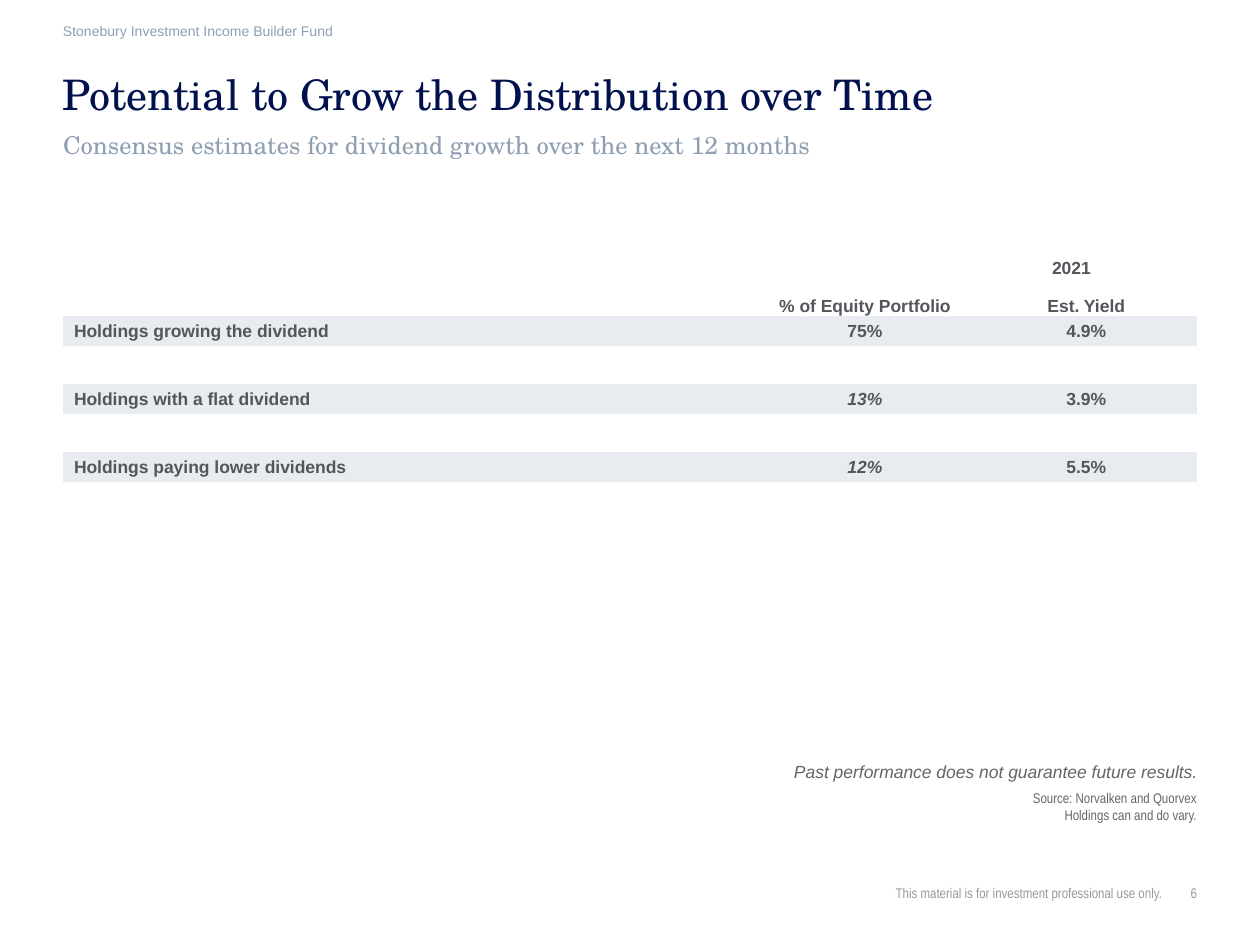
from dataclasses import dataclass

from pptx import Presentation
from pptx.dml.color import RGBColor
from pptx.enum.text import MSO_ANCHOR, PP_ALIGN
from pptx.util import Pt

LEFT, CENTER, RIGHT = PP_ALIGN.LEFT, PP_ALIGN.CENTER, PP_ALIGN.RIGHT
TOP, MIDDLE, BOTTOM = MSO_ANCHOR.TOP, MSO_ANCHOR.MIDDLE, MSO_ANCHOR.BOTTOM
NO_GRID_STYLE = "{2D5ABB26-0587-4C30-8999-92F81FD0307C}"


@dataclass(frozen=True)
class Theme:
    serif: str = "TeX Gyre Schola"
    sans: str = "Arial"
    narrow: str = "Arial Narrow"
    navy: str = "00114D"
    slate: str = "8E9FB2"
    body: str = "53565A"
    note: str = "656565"
    footer: str = "989898"
    band: str = "E8ECF0"
    white: str = "FFFFFF"
    title_size: float = 24
    subtitle_size: float = 14
    body_size: float = 10
    small_size: float = 8


THEME = Theme()

HOLDINGS = [
    ("Holdings growing the dividend", "75%", "4.9%", False),
    ("Holdings with a flat dividend", "13%", "3.9%", True),
    ("Holdings paying lower dividends", "12%", "5.5%", True),
]
COLUMN_WIDTHS = [395, 126.5, 126.5]
HEAD_HEIGHTS = [14.4, 20.3]
BAND_HEIGHT, GAP_HEIGHT = 17.2, 20.9
ROW_HEIGHTS = HEAD_HEIGHTS + [BAND_HEIGHT, GAP_HEIGHT] * 3 + [GAP_HEIGHT] * 3


def write(p, text, *, font=THEME.sans, size=THEME.body_size, color=THEME.body,
          bold=False, italic=False, align=LEFT, spacing=None):
    p.alignment = align
    if spacing:
        p.line_spacing = spacing
    r = p.add_run()
    r.text = text
    r.font.name = font
    r.font.size = Pt(size)
    r.font.bold = bold
    r.font.italic = italic
    r.font.color.rgb = RGBColor.from_string(color)


def add_text(slide, text, left, top, width, height, *, anchor=TOP, **fmt):
    sp = slide.shapes.add_textbox(Pt(left), Pt(top), Pt(width), Pt(height))
    tf = sp.text_frame
    tf.word_wrap = True
    tf.vertical_anchor = anchor
    tf.margin_left = tf.margin_right = tf.margin_top = tf.margin_bottom = 0
    for i, line in enumerate(text.split("\n")):
        p = tf.add_paragraph() if i else tf.paragraphs[0]
        write(p, line, **fmt)


def fill_cell(cell, text, *, anchor=MIDDLE, left=0, right=0, **fmt):
    cell.vertical_anchor = anchor
    cell.margin_left, cell.margin_right = Pt(left), Pt(right)
    write(cell.text_frame.paragraphs[0], text, bold=True, **fmt)


def add_holdings_table(slide, left, top):
    table = slide.shapes.add_table(
        len(ROW_HEIGHTS), len(COLUMN_WIDTHS), Pt(left), Pt(top),
        Pt(sum(COLUMN_WIDTHS)), Pt(sum(ROW_HEIGHTS))).table
    table.first_row = table.horz_banding = False
    table._tbl.tblPr[0].text = NO_GRID_STYLE
    for column, width in zip(table.columns, COLUMN_WIDTHS):
        column.width = Pt(width)
    band_rows = [len(HEAD_HEIGHTS) + 2 * i for i in range(len(HOLDINGS))]
    for i, height in enumerate(ROW_HEIGHTS):
        table.rows[i].height = Pt(height)
        for cell in table.rows[i].cells:
            cell.margin_left = cell.margin_right = 0
            cell.margin_top = cell.margin_bottom = 0
            cell.fill.solid()
            color = THEME.band if i in band_rows else THEME.white
            cell.fill.fore_color.rgb = RGBColor.from_string(color)
    for col in (0, 1):
        table.cell(0, col).merge(table.cell(1, col))
    head = dict(anchor=BOTTOM, align=CENTER)
    fill_cell(table.cell(0, 1), "% of Equity Portfolio", **head)
    fill_cell(table.cell(0, 2), "2021", right=17, **head)
    fill_cell(table.cell(1, 2), "Est. Yield", **head)
    for row, (label, share, est_yield, italic) in zip(band_rows, HOLDINGS):
        fill_cell(table.cell(row, 0), label, left=6.3)
        fill_cell(table.cell(row, 1), share, align=CENTER, italic=italic)
        fill_cell(table.cell(row, 2), est_yield, align=CENTER)


def main():
    prs = Presentation()
    prs.slide_width, prs.slide_height = Pt(720), Pt(540)
    slide = prs.slides.add_slide(prs.slide_layouts[6])

    add_text(slide, "Stonebury Investment Income Builder Fund", 36, 13, 216, 9.4,
             size=THEME.small_size, color=THEME.slate)
    add_text(slide, "Potential to Grow the Distribution over Time", 36, 42.5, 504, 26,
             anchor=BOTTOM, font=THEME.serif, size=THEME.title_size,
             color=THEME.navy, spacing=0.9)
    add_text(slide, "Consensus estimates for dividend growth over the next 12 months",
             36, 74.2, 505, 17, font=THEME.serif, size=THEME.subtitle_size,
             color=THEME.slate)
    add_holdings_table(slide, 36, 144.7)
    add_text(slide, "Past performance does not guarantee future results.",
             115, 435, 569, 12, anchor=BOTTOM, color=THEME.note, italic=True,
             align=RIGHT)
    small = dict(font=THEME.narrow, size=THEME.small_size, align=RIGHT)
    add_text(slide, "Source: Norvalken and Quorvex\nHoldings can and do vary.",
             115, 451.4, 569, 19, color=THEME.note, **small)
    footer = dict(anchor=BOTTOM, color=THEME.footer, **small)
    add_text(slide, "This material is for investment professional use only.",
             360, 500.4, 304.5, 14.4, **footer)
    add_text(slide, "6", 664.5, 500.4, 19.5, 14.4, **footer)

    prs.save("out.pptx")


if __name__ == "__main__":
    main()
